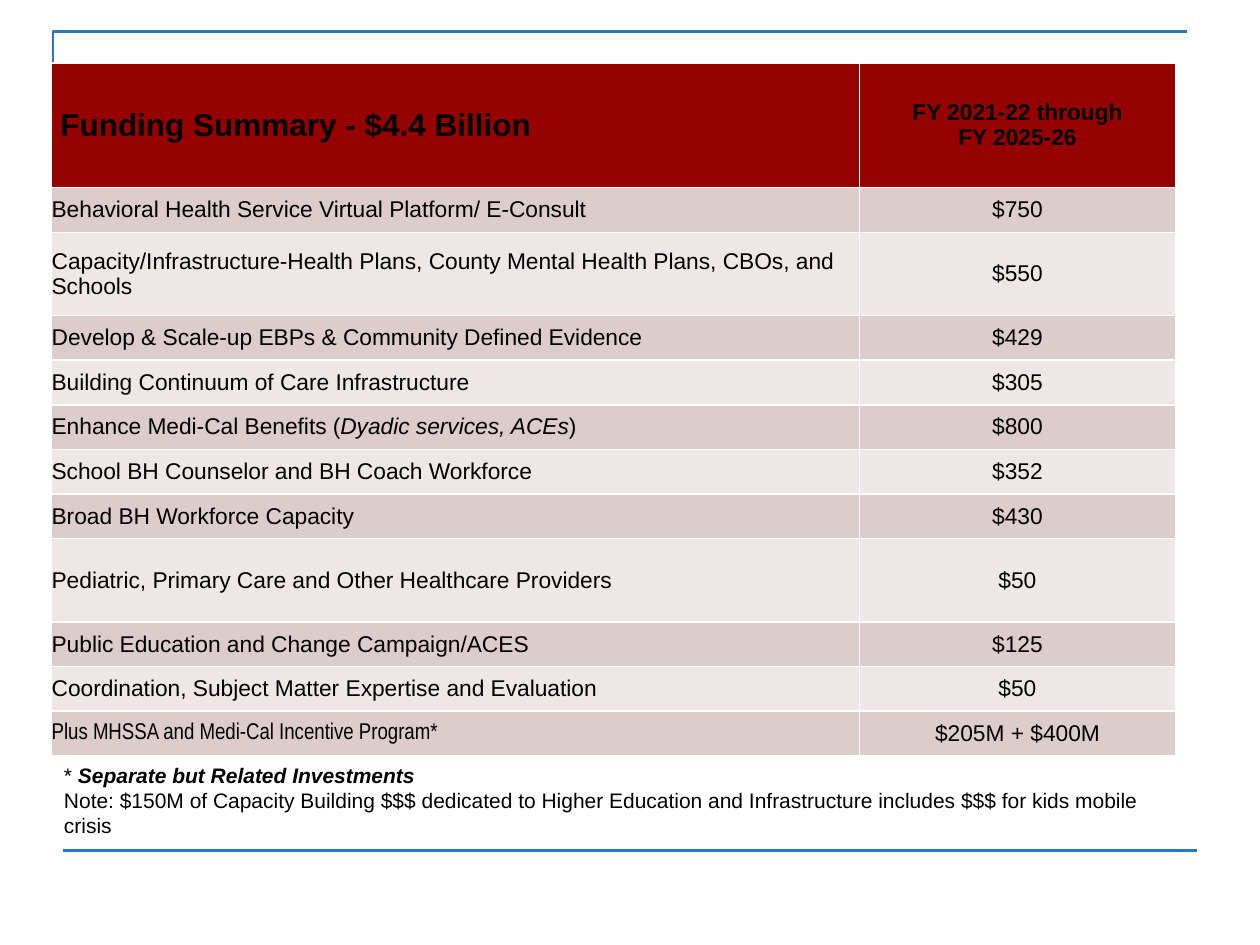
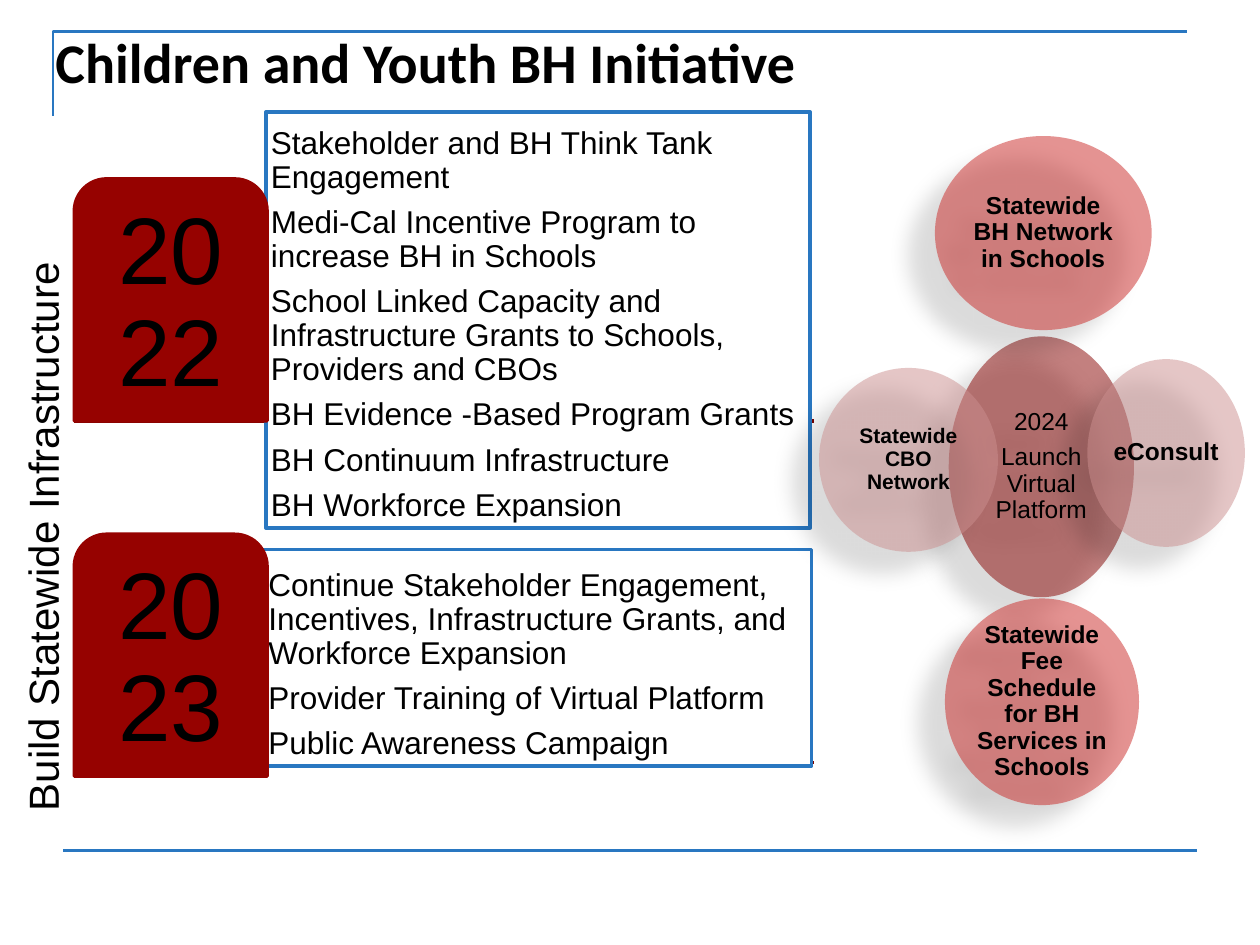
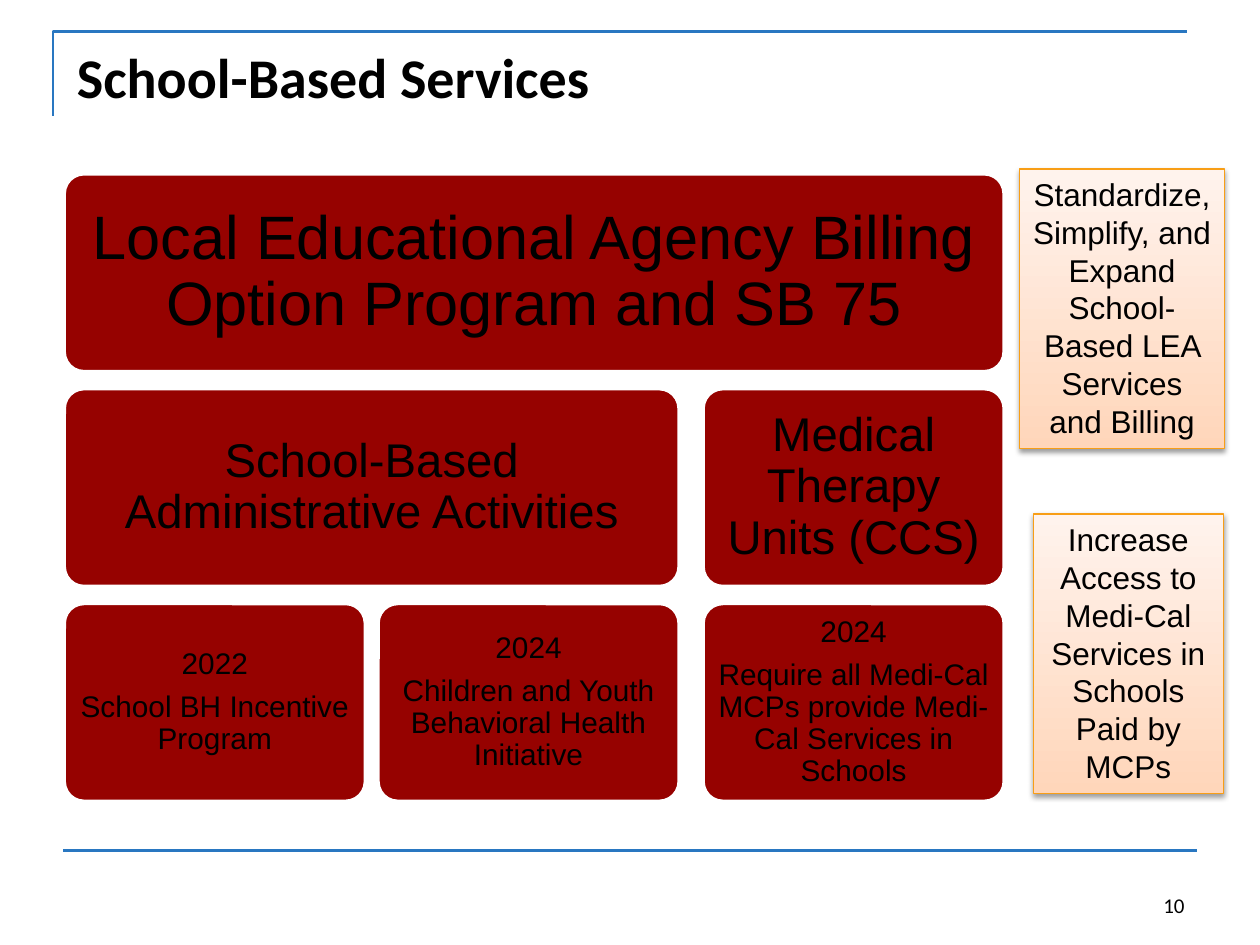
import dataclasses
import typing

import lxml.etree
import pptx
import pptx.dml.color
import pptx.enum.shapes
import pptx.enum.text
import pptx.oxml.ns
import pptx.util

Inches = pptx.util.Inches
Pt = pptx.util.Pt
Shape = pptx.enum.shapes.MSO_SHAPE
Align = pptx.enum.text.PP_ALIGN
Anchor = pptx.enum.text.MSO_ANCHOR
qn = pptx.oxml.ns.qn

BLACK, WHITE, BLUE, RED = "000000", "FFFFFF", "2977C1", "960200"
DARK, ROSE, CORAL, WINE = "780200", "CC8F8F", "CB2826", "880200"
ORANGE, PEACH, CREAM = "F89E16", "FFD6BA", "FFF3ED"
BANDS = ("DDCCCC", "EFE7E7")


class Run(typing.NamedTuple):
    text: str
    bold: bool = False
    slant: bool = False


Para = str | tuple[Run, ...]


@dataclasses.dataclass
class Style:
    size: float
    bold: bool = False
    align: Align = Align.CENTER
    font: str = "Arial"
    tight: bool = False


@dataclasses.dataclass
class Shade:
    alpha: int
    blur: float
    dist: float
    angle: int


@dataclasses.dataclass
class Box:
    kind: Shape
    place: tuple[float, float, float, float]
    paras: list[Para]
    style: Style
    fill: str
    line: str | None = None
    width: float = 2
    inset: float = 0.1
    anchor: Anchor = Anchor.MIDDLE
    adjust: tuple[float, ...] = ()
    clear: bool = False
    fade: str | None = None
    shade: Shade | None = None


class Tile(typing.NamedTuple):
    row: int
    first: int
    last: int
    size: float
    inset: float
    paras: list[Para]


SOFT = Shade(28, 11.8, 19.7, 141)
DROP = Shade(38, 3.1, 1.6, 90)


def tint(code: str) -> pptx.dml.color.RGBColor:
    return pptx.dml.color.RGBColor.from_string(code)


def write(frame, paras: list[Para], style: Style) -> None:
    for i, item in enumerate(paras):
        para = frame.paragraphs[0] if i == 0 else frame.add_paragraph()
        para.alignment = style.align
        if style.tight:
            para.line_spacing = 0.9
            para.space_after = Pt(0.35 * style.size)
        font = para.font
        font.name, font.size = style.font, Pt(style.size)
        font.color.rgb = tint(BLACK)
        if isinstance(item, str):
            font.bold = style.bold
            para.add_run().text = item
            continue
        for part in item:
            run = para.add_run()
            run.text = part.text
            run.font.bold, run.font.italic = part.bold, part.slant


def pad(frame, inset: float, anchor: Anchor) -> None:
    frame.word_wrap = True
    frame.vertical_anchor = anchor
    frame.margin_left = frame.margin_right = Inches(inset)
    frame.margin_top = frame.margin_bottom = Inches(min(inset, 0.05) if inset == 0.1 else inset)


def add_shade(shape, shade: Shade) -> None:
    effects = shape.element.spPr.find(qn("a:effectLst"))
    outer = lxml.etree.SubElement(
        effects, qn("a:outerShdw"), blurRad=str(Pt(shade.blur)), dist=str(Pt(shade.dist)),
        dir=str(shade.angle * 60000), algn="ctr", rotWithShape="0")
    color = lxml.etree.SubElement(outer, qn("a:srgbClr"), val=BLACK)
    lxml.etree.SubElement(color, qn("a:alpha"), val=str(shade.alpha * 1000))


def add_box(slide, box: Box) -> None:
    shape = slide.shapes.add_shape(box.kind, *map(Inches, box.place))
    for i, value in enumerate(box.adjust):
        shape.adjustments[i] = value
    if box.fade:
        shape.fill.gradient()
        shape.fill.gradient_angle = 90
        for stop, code in zip(shape.fill.gradient_stops, (box.fill, box.fade)):
            stop.color.rgb = tint(code)
    else:
        shape.fill.solid()
        shape.fill.fore_color.rgb = tint(box.fill)
    if box.clear:
        color = shape.element.spPr.find(qn("a:solidFill")).find(qn("a:srgbClr"))
        lxml.etree.SubElement(color, qn("a:alpha"), val="50000")
    if box.line:
        shape.line.color.rgb = tint(box.line)
        shape.line.width = Pt(box.width)
    else:
        shape.line.fill.background()
    shape.shadow.inherit = False
    if box.shade:
        add_shade(shape, box.shade)
    pad(shape.text_frame, box.inset, box.anchor)
    write(shape.text_frame, box.paras, box.style)


def add_text(slide, place: tuple[float, float, float, float], paras: list[Para],
             style: Style, anchor: Anchor = Anchor.TOP, turn: int = 0) -> None:
    shape = slide.shapes.add_textbox(*map(Inches, place))
    shape.rotation = turn
    pad(shape.text_frame, 0.1, anchor)
    write(shape.text_frame, paras, style)


def add_rule(slide, left: float, right: float, top: float, code: str, width: float):
    rule = slide.shapes.add_connector(
        pptx.enum.shapes.MSO_CONNECTOR.STRAIGHT,
        Inches(left), Inches(top), Inches(right), Inches(top))
    rule.line.color.rgb = tint(code)
    rule.line.width = Pt(width)
    lxml.etree.SubElement(rule.element.spPr, qn("a:effectLst"))
    return rule


def add_frame(deck, slide) -> None:
    path = slide.shapes.build_freeform(Inches(0.42), Inches(0.92))
    path.add_line_segments(
        [(Inches(0.42), Inches(0.25)), (Inches(9.42), Inches(0.25))], close=False)
    corner = path.convert_to_shape()
    corner.fill.background()
    corner.line.color.rgb = tint(BLUE)
    corner.line.width = Pt(1.5)
    corner.shadow.inherit = False
    base = add_rule(slide, 0.5, 9.5, 6.75, BLUE, 1.5)
    for shape in (corner, base):
        deck.slide_master.shapes.element.append(shape.element)


def add_title(deck, text: str, left: float, top: float):
    slide = deck.slides.add_slide(deck.slide_layouts[5])
    title = slide.shapes.title
    title.left, title.top = Inches(left), Inches(top)
    title.width, title.height = Inches(8.62), Inches(1.09)
    pad(title.text_frame, 0.1, Anchor.TOP)
    write(title.text_frame, [text], Style(32, True, Align.LEFT, "Calibri"))
    return slide


def add_funds(deck) -> None:
    slide = deck.slides.add_slide(deck.slide_layouts[6])
    add_frame(deck, slide)
    funds: list[tuple[Para, str]] = [
        ("Behavioral Health Service Virtual Platform/ E-Consult", "$750"),
        ("Capacity/Infrastructure-Health Plans, County Mental Health Plans, CBOs, and Schools",
         "$550"),
        ("Develop & Scale-up EBPs & Community Defined Evidence", "$429"),
        ("Building Continuum of Care Infrastructure", "$305"),
        ((Run("Enhance Medi-Cal Benefits ("), Run("Dyadic services, ACEs", slant=True), Run(")")),
         "$800"),
        ("School BH Counselor and BH Coach Workforce", "$352"),
        ("Broad BH Workforce Capacity", "$430"),
        ("Pediatric, Primary Care and Other Healthcare Providers", "$50"),
        ("Public Education and Change Campaign/ACES", "$125"),
        ("Coordination, Subject Matter Expertise and Evaluation", "$50"),
        ("Plus MHSSA and Medi-Cal Incentive Program*", "$205M + $400M"),
    ]
    table = slide.shapes.add_table(
        len(funds) + 1, 2, Inches(0.41), Inches(0.5), Inches(8.92), Inches(5.5)).table
    table.columns[0].width, table.columns[1].width = Inches(6.41), Inches(2.51)
    high, tall = 0.99, 0.66
    short = (5.5 - high - 2 * tall) / 9
    for i, row in enumerate(table.rows):
        row.height = Inches(high if i == 0 else tall if i in (2, 8) else short)

    def fill_cell(row: int, col: int, paras: list[Para], style: Style, code: str) -> None:
        cell = table.cell(row, col)
        cell.fill.solid()
        cell.fill.fore_color.rgb = tint(code)
        cell.vertical_anchor = Anchor.MIDDLE
        cell.margin_left = cell.margin_right = cell.margin_top = cell.margin_bottom = 0
        write(cell.text_frame, paras, style)

    fill_cell(0, 0, ["Funding Summary - $4.4 Billion"], Style(18, True, Align.LEFT), RED)
    table.cell(0, 0).margin_left = Inches(0.07)
    fill_cell(0, 1, ["FY 2021-22 through", "FY 2025-26"], Style(13, True), RED)
    for i, (name, cost) in enumerate(funds, 1):
        face = "Arial Narrow" if i == len(funds) else "Arial"
        band = BANDS[(i - 1) % 2]
        fill_cell(i, 0, [name], Style(13, align=Align.LEFT, font=face), band)
        fill_cell(i, 1, [cost], Style(13), band)
    add_text(slide, (0.41, 6, 8.9, 0.71), [
        (Run("* "), Run("Separate but Related Investments", True, True)),
        "Note: $150M of Capacity Building $$$ dedicated to Higher Education and "
        "Infrastructure includes $$$ for kids mobile crisis",
    ], Style(12, align=Align.LEFT))


def add_youth(deck) -> None:
    slide = add_title(deck, "Children and Youth BH Initiative", 0.34, 0.17)
    for top in (6.05, 3.34):
        add_rule(slide, 0.59, 6.46, top, DARK, 2)
    years = [
        ("2022", 1.42, (2.11, 0.89, 4.32, 3.3), [
            "Stakeholder and BH Think Tank Engagement",
            "Medi-Cal Incentive Program to increase BH in Schools",
            "School Linked Capacity and Infrastructure Grants to Schools, Providers and CBOs",
            "BH Evidence -Based Program Grants",
            "BH Continuum Infrastructure",
            "BH Workforce Expansion",
        ]),
        ("2023", 4.24, (2.09, 4.36, 4.35, 1.72), [
            "Continue Stakeholder Engagement, Incentives, Infrastructure Grants, "
            "and Workforce Expansion",
            "Provider Training of Virtual Platform",
            "Public Awareness Campaign",
        ]),
    ]
    for year, top, place, steps in years:
        add_box(slide, Box(Shape.RECTANGLE, place, steps,
                           Style(18, align=Align.LEFT, tight=True), WHITE, BLUE,
                           inset=0.04, anchor=Anchor.BOTTOM))
        add_box(slide, Box(Shape.ROUND_2_SAME_RECTANGLE, (0.59, top, 1.53, 1.92), [year],
                           Style(54, tight=True), RED, RED, inset=0.11, adjust=(0.167, 0)))
    add_text(slide, (-1.96, 4.01, 4.59, 0.5), ["Build Statewide Infrastructure"],
             Style(24), turn=270)
    rings = [
        ((7.53, 2.67, 1.47, 2.07), WINE, 14, ["2024", "Launch Virtual Platform"]),
        ((7.42, 1.08, 1.72, 1.54), CORAL, 14, ["Statewide BH Network in Schools"]),
        ((8.63, 2.85, 1.25, 1.49), ROSE, 14, ["eConsult"]),
        ((6.5, 2.92, 1.42, 1.46), ROSE, 12, ["Statewide CBO Network"]),
        ((7.5, 4.75, 1.54, 1.64), CORAL, 14,
         ["Statewide Fee Schedule for BH Services in Schools"]),
    ]
    for place, code, size, paras in rings:
        add_box(slide, Box(Shape.OVAL, place, paras, Style(size, code != WINE, tight=True),
                           code, inset=0.02, clear=True, shade=SOFT))


def add_school(deck) -> None:
    slide = add_title(deck, "School-Based Services", 0.51, 0.29)
    add_text(slide, (7.17, 6.83, 2.33, 0.5), ["10"],
             Style(12, align=Align.RIGHT, font="Calibri"), Anchor.BOTTOM)
    lefts, wide = (0.51, 3, 5.58), 2.39
    tiles = [
        Tile(0, 0, 2, 35, 0.15, ["Local Educational Agency Billing Option Program and SB 75"]),
        Tile(1, 0, 1, 27, 0.11, ["School-Based Administrative Activities"]),
        Tile(2, 0, 0, 17, 0.07, ["2022", "School BH Incentive Program"]),
        Tile(2, 1, 1, 17, 0.07, ["2024", "Children and Youth Behavioral Health Initiative"]),
        Tile(1, 2, 2, 27, 0.11, ["Medical Therapy Units (CCS)"]),
        Tile(2, 2, 2, 17, 0.07,
             ["2024", "Require all Medi-Cal MCPs provide Medi-Cal Services in Schools"]),
    ]
    for tile in tiles:
        left = lefts[tile.first]
        place = (left, 1.38 + 1.705 * tile.row, lefts[tile.last] + wide - left, 1.57)
        add_box(slide, Box(Shape.ROUNDED_RECTANGLE, place, tile.paras,
                           Style(tile.size, tight=True), RED, WHITE,
                           inset=tile.inset, adjust=(0.1,)))
    goals = [
        ((8.09, 1.34, 1.63, 2.22),
         "Standardize, Simplify, and Expand School-Based LEA Services and Billing"),
        ((8.2, 4.08, 1.51, 2.22),
         "Increase Access to Medi-Cal Services in Schools Paid by MCPs"),
    ]
    for place, goal in goals:
        add_box(slide, Box(Shape.RECTANGLE, place, [goal], Style(18), PEACH, ORANGE, 0.75,
                           anchor=Anchor.TOP, fade=CREAM, shade=DROP))


def main() -> None:
    deck = pptx.Presentation()
    deck.slide_width, deck.slide_height = Inches(10), Inches(7.5)
    add_funds(deck)
    add_youth(deck)
    add_school(deck)
    deck.save("out.pptx")


if __name__ == "__main__":
    main()
